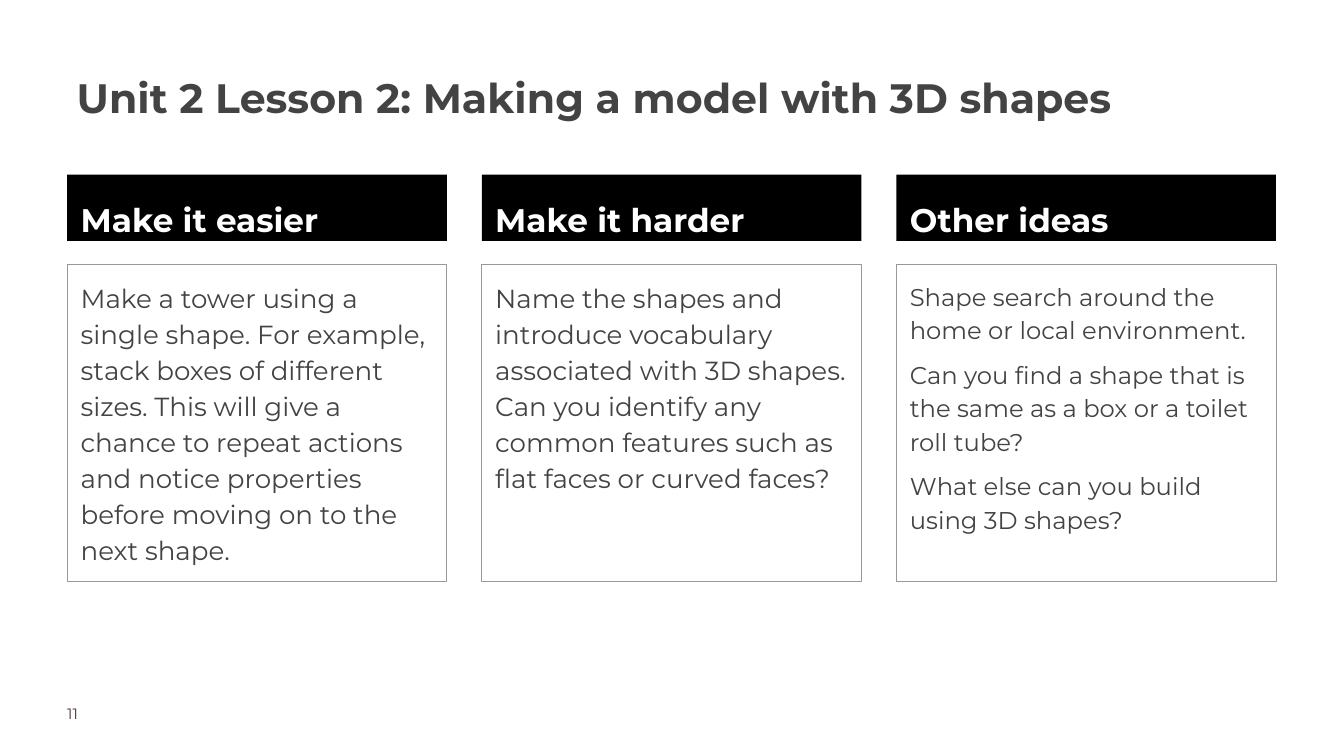
"""Build the lesson slide with three columns of ideas for adapting the activity."""
from pptx import Presentation
from pptx.dml.color import RGBColor
from pptx.enum.shapes import MSO_SHAPE
from pptx.enum.text import MSO_ANCHOR, PP_ALIGN
from pptx.util import Cm, Pt

RECT = MSO_SHAPE.RECTANGLE
TOP = MSO_ANCHOR.TOP
LEFT = PP_ALIGN.LEFT

BLACK = RGBColor(0x00, 0x00, 0x00)
WHITE = RGBColor(0xFF, 0xFF, 0xFF)
GREY = RGBColor(0x99, 0x99, 0x99)
DARK = RGBColor(0x43, 0x43, 0x43)
PLUM = RGBColor(0x4B, 0x32, 0x41)

COLUMN_LEFT, COLUMN_PITCH, COLUMN_WIDTH = 2.54, 15.67, 14.35
COLUMNS = [
    ("Make it easier", 28, [
        "Make a tower using a single shape. For example, stack boxes of different sizes. "
        "This will give a chance to repeat actions and notice properties before moving on "
        "to the next shape."]),
    ("Make it harder", 28, [
        "Name the shapes and introduce vocabulary associated with 3D shapes. Can you "
        "identify any common features such as flat faces or curved faces?"]),
    ("Other ideas", 26, [
        "Shape search around the home or local environment.",
        "Can you find a shape that is the same as a box or a toilet roll tube?",
        "What else can you build using 3D shapes?"]),
]


class LessonSlide:
    """Holds the font and the current slide, and adds its elements."""

    font = "Montserrat"

    def __init__(self, prs):
        self.s = prs.slides.add_slide(prs.slide_layouts[6])

    def fill_text(self, sp, paragraphs, size, color, bold=False, spacing=1.0, inset=0.0):
        tf = sp.text_frame
        tf.word_wrap = True
        tf.vertical_anchor = TOP
        tf.margin_left = tf.margin_right = tf.margin_top = tf.margin_bottom = Cm(inset)
        for i, text in enumerate(paragraphs):
            p = tf.add_paragraph() if i else tf.paragraphs[0]
            p.alignment = LEFT
            p.line_spacing = spacing
            if i:
                p.space_before = Pt(12)
            r = p.add_run()
            r.text = text
            r.font.name = self.font
            r.font.size = Pt(size)
            r.font.bold = bold
            r.font.color.rgb = color

    def text(self, x, y, w, h, text, size, color, **style):
        sp = self.s.shapes.add_textbox(Cm(x), Cm(y), Cm(w), Cm(h))
        self.fill_text(sp, [text], size, color, **style)

    def rect(self, x, y, w, h):
        sp = self.s.shapes.add_shape(RECT, Cm(x), Cm(y), Cm(w), Cm(h))
        sp.shadow.inherit = False
        return sp

    def header(self, x, text):
        sp = self.rect(x, 6.6, COLUMN_WIDTH, 2.51)
        sp.fill.solid()
        sp.fill.fore_color.rgb = BLACK
        sp.line.fill.background()
        self.fill_text(sp, [text], 35, WHITE, bold=True, spacing=1.3, inset=0.51)

    def body(self, x, paragraphs, size):
        sp = self.rect(x, 9.98, COLUMN_WIDTH, 11.99)
        sp.fill.background()
        sp.line.color.rgb = GREY
        sp.line.width = Pt(0.75)
        self.fill_text(sp, paragraphs, size, DARK, spacing=1.15, inset=0.51)


def main():
    prs = Presentation()
    prs.slide_width, prs.slide_height = Cm(50.8), Cm(28.58)
    slide = LessonSlide(prs)
    for i, (heading, size, paragraphs) in enumerate(COLUMNS):
        x = COLUMN_LEFT + i * COLUMN_PITCH
        slide.header(x, heading)
        slide.body(x, paragraphs, size)
    slide.text(2.9, 2.46, 43.2, 4.52, "Unit 2 Lesson 2: Making a model with 3D shapes",
               44, DARK, bold=True, spacing=1.15)
    slide.text(COLUMN_LEFT, 26.62, 3.99, 0.99, "11", 16, PLUM)
    prs.save("out.pptx")


if __name__ == "__main__":
    main()
